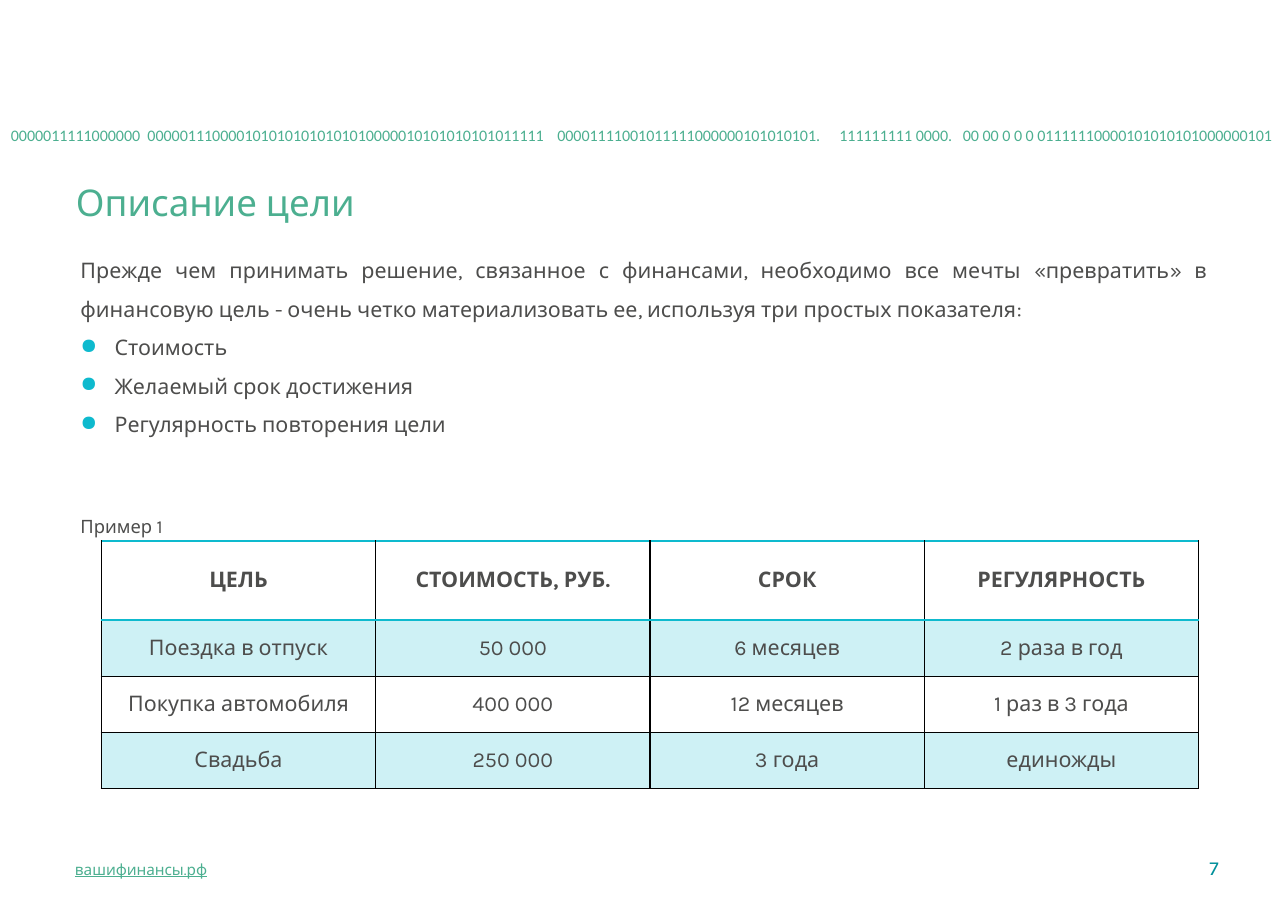
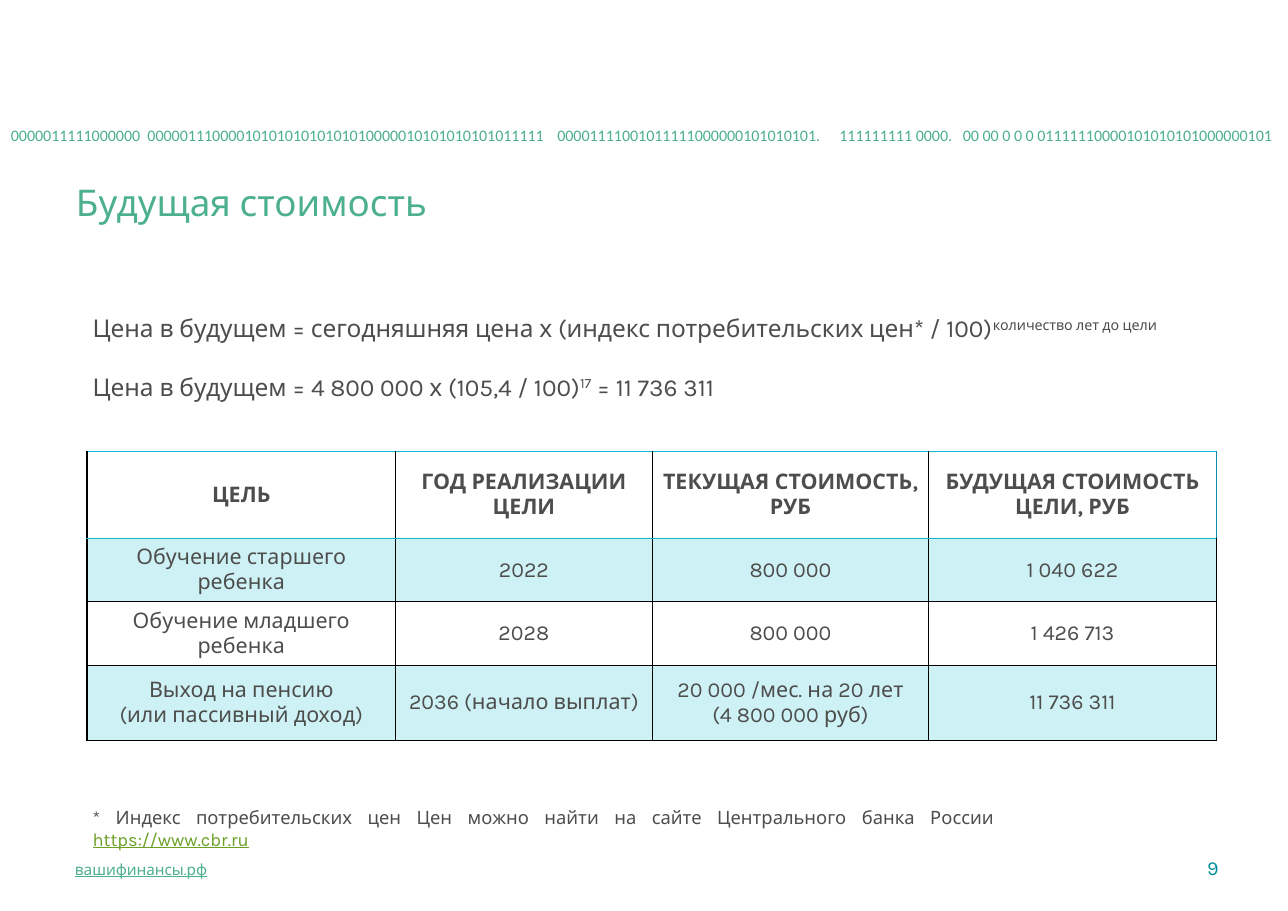
"""Build two slides on financial goals: describing a goal and its future cost."""
from dataclasses import dataclass

from lxml.etree import SubElement
from pptx import Presentation
from pptx.dml.color import RGBColor
from pptx.enum.text import MSO_ANCHOR, PP_ALIGN
from pptx.oxml import parse_xml
from pptx.oxml.ns import nsdecls, qn
from pptx.util import Inches, Pt


@dataclass(frozen=True)
class Theme:
    font: str = "Karla"
    digits_font: str = "Calibri"
    green: str = "4CAF90"
    teal: str = "0EBACE"
    blue: str = "0989B1"
    number: str = "00909B"
    text: str = "4D4D4C"
    link: str = "6B9F25"
    line: str = "000000"
    title_size: float = 24
    formula_size: float = 16
    body_size: float = 14
    number_size: float = 13
    note_size: float = 12
    digits_size: float = 10.5
    footer_size: float = 10


theme = Theme()


def add_text(page, area, paragraphs, size, color=theme.text, font=theme.font,
             align=PP_ALIGN.LEFT, spacing=None, anchor=MSO_ANCHOR.TOP, side=0.05):
    box = page.shapes.add_textbox(*[Inches(value) for value in area])
    frame = box.text_frame
    frame.word_wrap = True
    frame.vertical_anchor = anchor
    frame.margin_left = frame.margin_right = Inches(side)
    frame.margin_top = frame.margin_bottom = Inches(0.05)
    frame.text = "\n".join(paragraphs)
    for paragraph in frame.paragraphs:
        paragraph.alignment = align
        paragraph.line_spacing = spacing
        for span in paragraph.runs:
            span.font.size = Pt(size)
            span.font.name = font
            span.font.color.rgb = RGBColor.from_string(color)
    return frame


def add_grid(page, left, top, widths, heights, rows):
    area = [Inches(value) for value in (left, top, sum(widths), sum(heights))]
    table = page.shapes.add_table(len(rows), len(widths), *area).table
    for column, width in zip(table.columns, widths):
        column.width = Inches(width)
    for index, (row, height) in enumerate(zip(rows, heights)):
        table.rows[index].height = Inches(height)
        for cell, words in zip(table.rows[index].cells, row):
            cell.text = words
            cell.vertical_anchor = MSO_ANCHOR.MIDDLE
            cell.margin_left = cell.margin_right = Inches(0.05)
            cell.margin_top = cell.margin_bottom = Inches(0.05)
            for paragraph in cell.text_frame.paragraphs:
                paragraph.alignment = PP_ALIGN.CENTER
                for span in paragraph.runs:
                    span.font.size = Pt(theme.body_size)
                    span.font.name = theme.font
                    span.font.bold = index == 0
                    span.font.color.rgb = RGBColor.from_string(theme.text)
            if index % 2:
                cell.fill.solid()
                cell.fill.fore_color.rgb = RGBColor.from_string(theme.teal)
                tint = cell._tc.tcPr.find(".//" + qn("a:srgbClr"))
                SubElement(tint, qn("a:alpha"), val="20000")
            else:
                cell.fill.background()
            borders = {
                "lnL": theme.line,
                "lnR": theme.line,
                "lnT": theme.teal if index < 2 else theme.line,
                "lnB": theme.teal if index == 0 else theme.line,
            }
            for place, (side, color) in enumerate(borders.items()):
                cell._tc.tcPr.insert(place, parse_xml(
                    f'<a:{side} {nsdecls("a")} w="12700"><a:solidFill>'
                    f'<a:srgbClr val="{color}"/></a:solidFill></a:{side}>'))
    return table


deck = Presentation()
deck.slide_width = Inches(11.69)
deck.slide_height = Inches(8.27)

digits = "\t".join([
    "0000011111000000",
    "0000011100001010101010101010000010101010101011111",
    "00001111001011111000000101010101.",
    "111111111 0000.",
    "00 00 0 0 0 01111110000101010101000000101",
])
digit_stops = (1.24, 4.96, 7.52, 8.64)

pages = []
for title, number in (("Описание цели", "7"), ("Будущая стоимость", "9")):
    page = deck.slides.add_slide(deck.slide_layouts[6])
    add_text(page, (0.57, 7.67, 3.97, 0.44), ["вашифинансы.рф"], theme.footer_size,
             theme.green, anchor=MSO_ANCHOR.MIDDLE,
             side=0.11).paragraphs[0].runs[0].font.underline = True
    add_text(page, (10.3, 7.66, 0.87, 0.44), [number], theme.number_size, theme.number,
             align=PP_ALIGN.RIGHT, anchor=MSO_ANCHOR.MIDDLE, side=0.11)
    add_text(page, (0.58, 1.58, 10.52, 0.58), [title], theme.title_size,
             theme.green, side=0.11)
    band = add_text(page, (0, 1.09, 11.69, 0.28), [digits], theme.digits_size,
                    theme.green, theme.digits_font, side=0.1)
    band.word_wrap = False
    tabs = SubElement(band.paragraphs[0]._p.get_or_add_pPr(), qn("a:tabLst"))
    for stop in digit_stops:
        SubElement(tabs, qn("a:tab"), pos=str(Inches(stop)), algn="l")
    pages.append(page)

goal_page, cost_page = pages

body = add_text(goal_page, (0.68, 2.17, 10.33, 2.74), [
    "Прежде чем принимать решение, связанное с финансами, необходимо все мечты "
    "«превратить» в финансовую цель - очень четко материализовать ее, "
    "используя три простых показателя:",
    "Стоимость",
    "Желаемый срок достижения",
    "Регулярность повторения цели",
    "Пример 1",
], theme.body_size, align=PP_ALIGN.JUSTIFY, spacing=1.5)
for paragraph in body.paragraphs[1:4]:
    properties = paragraph._p.get_or_add_pPr()
    properties.set("marL", str(Inches(0.31)))
    properties.set("indent", str(-Inches(0.31)))
    bullet_color = SubElement(properties, qn("a:buClr"))
    SubElement(bullet_color, qn("a:srgbClr"), val=theme.teal)
    SubElement(properties, qn("a:buChar"), char="●")
caption = body.paragraphs[4]
caption.space_before = Pt(44)
caption.runs[0].font.size = Pt(theme.note_size)

add_grid(goal_page, 0.92, 4.91, [2.49] * 4, [0.72] + [0.51] * 3, [
    ("ЦЕЛЬ", "СТОИМОСТЬ, РУБ.", "СРОК", "РЕГУЛЯРНОСТЬ"),
    ("Поездка в отпуск", "50 000", "6 месяцев", "2 раза в год"),
    ("Покупка автомобиля", "400 000", "12 месяцев", "1 раз в 3 года"),
    ("Свадьба", "250 000", "3 года", "единожды"),
])

formula = add_text(cost_page, (0.79, 2.53, 9.84, 1.09), [
    "Цена в будущем = сегодняшняя цена х (индекс потребительских цен* / 100)",
    "Цена в будущем = 4 800 000 х (105,4 / 100)",
], theme.formula_size, align=PP_ALIGN.JUSTIFY, spacing=2)
endings = (
    (("количество лет до цели", True),),
    (("17", True), (" = 11 736 311", False)),
)
for paragraph, parts in zip(formula.paragraphs, endings):
    for words, raised in parts:
        span = paragraph.add_run()
        span.text = words
        span.font.size = Pt(theme.formula_size)
        span.font.name = theme.font
        span.font.color.rgb = RGBColor.from_string(theme.text)
        if raised:
            span.font._element.set("baseline", "32000")

costs = add_grid(cost_page, 0.79, 4.1, [2.8, 2.33, 2.51, 2.61], [0.79, 0.57, 0.58, 0.68], [
    ("ЦЕЛЬ", "ГОД РЕАЛИЗАЦИИ ЦЕЛИ", "ТЕКУЩАЯ СТОИМОСТЬ, РУБ", "БУДУЩАЯ СТОИМОСТЬ ЦЕЛИ, РУБ"),
    ("Обучение старшего ребенка", "2022", "800 000", "1 040 622"),
    ("Обучение младшего ребенка", "2028", "800 000", "1 426 713"),
    ("Выход на пенсию\n(или пассивный доход)", "2036 (начало выплат)",
     "20 000 /мес. на 20 лет\n(4 800 000 руб)", "11 736 311"),
])
right_border = costs.cell(0, 3)._tc.tcPr.find(qn("a:lnR"))
right_border.find(".//" + qn("a:srgbClr")).set("val", theme.blue)

note = add_text(cost_page, (0.79, 7.27, 8.29, 0.3), [
    "* Индекс потребительских цен Цен можно найти на сайте Центрального банка России ",
], theme.note_size, align=PP_ALIGN.JUSTIFY)
address = note.paragraphs[0].add_run()
address.text = "https://www.cbr.ru"
address.font.size = Pt(theme.note_size)
address.font.name = theme.font
address.font.underline = True
address.font.color.rgb = RGBColor.from_string(theme.link)

deck.save("out.pptx")
